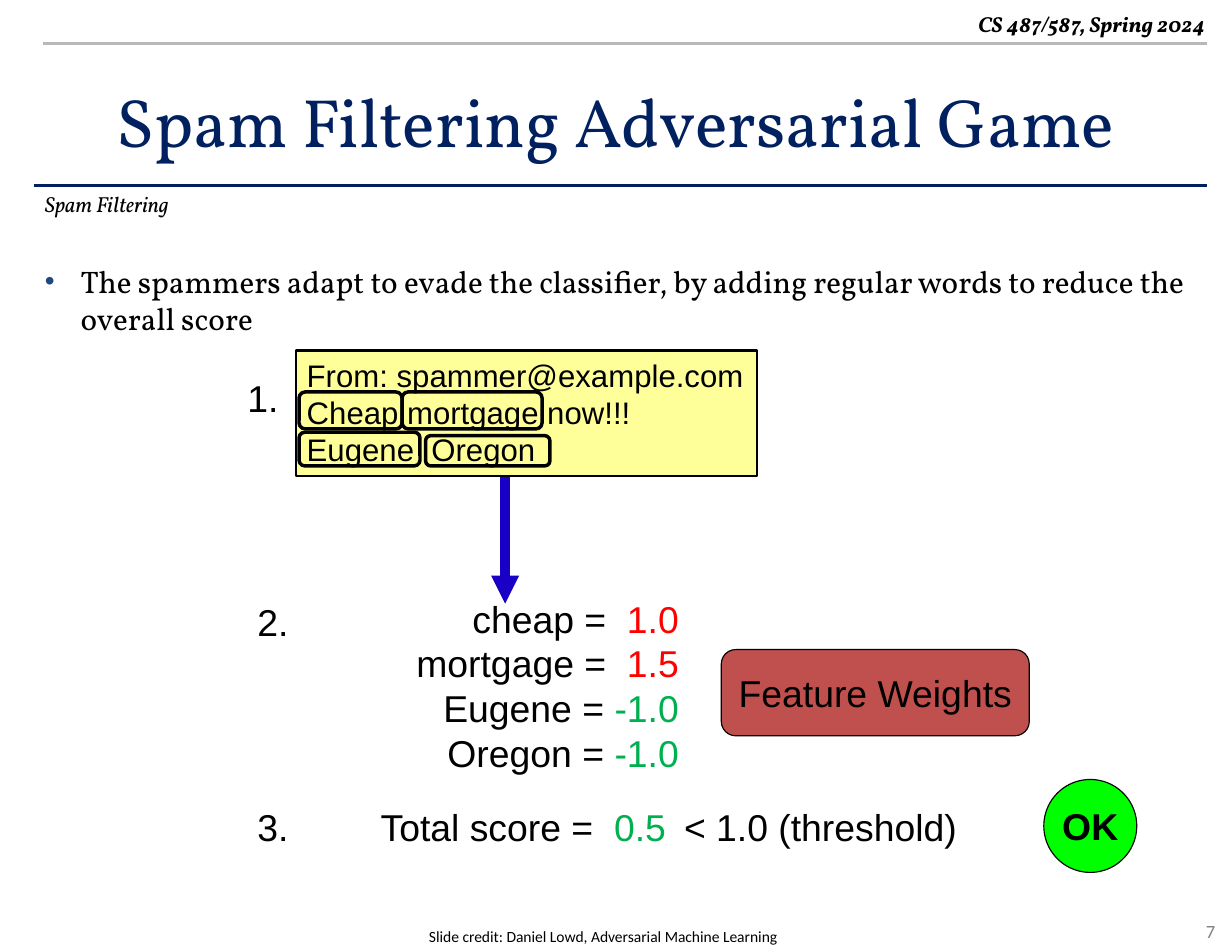
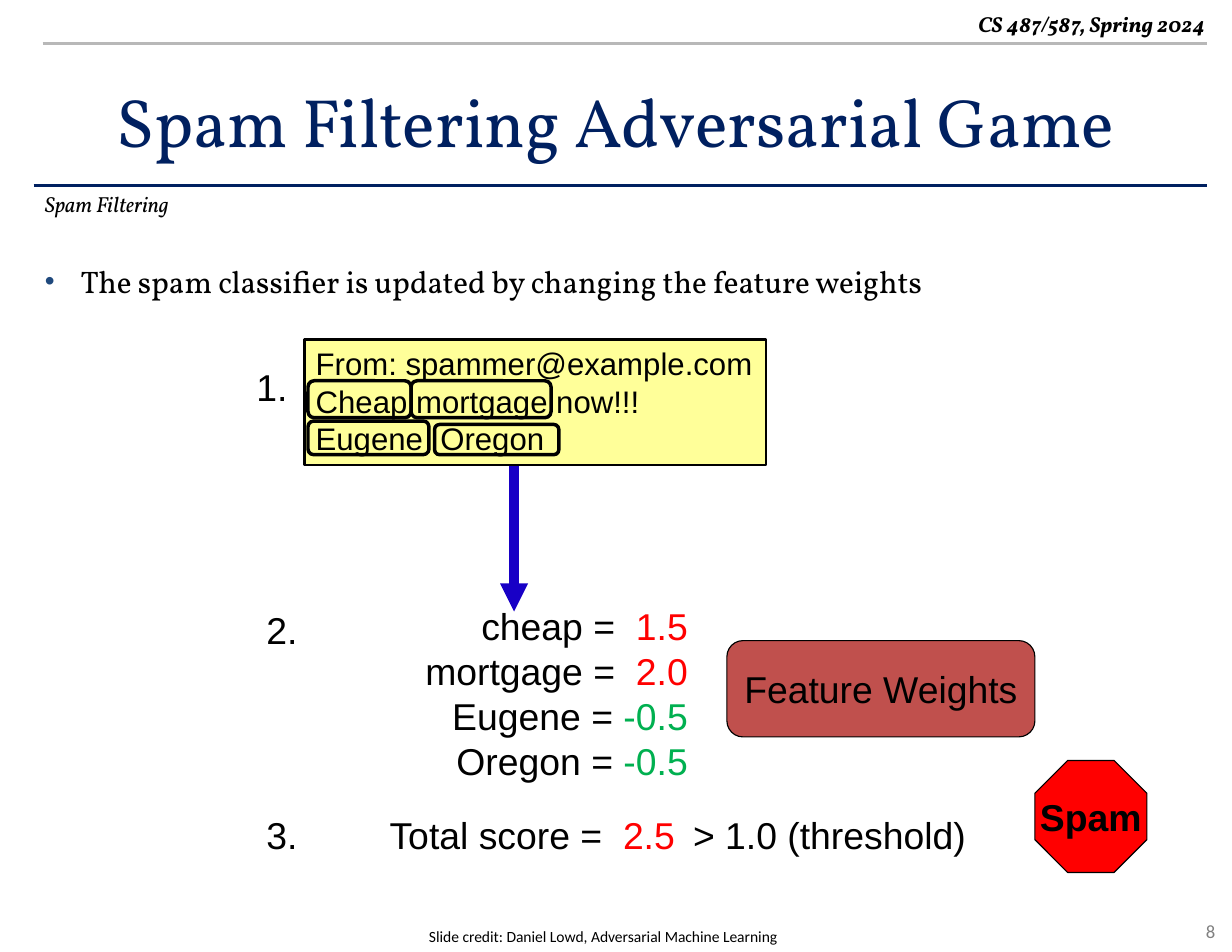
from lxml import etree
from pptx import Presentation
from pptx.dml.color import RGBColor
from pptx.enum import shapes, text
from pptx.oxml import ns
from pptx.util import Inches, Pt

BLACK = RGBColor(0x00, 0x00, 0x00)
NAVY = RGBColor(0x00, 0x20, 0x60)
BULLET_BLUE = RGBColor(0x1F, 0x49, 0x7D)
GREY = RGBColor(0x80, 0x80, 0x80)
RULE_GREY = RGBColor(0xB8, 0xB8, 0xB8)
EMAIL_YELLOW = RGBColor(0xFF, 0xFF, 0x99)
ARROW_BLUE = RGBColor(0x18, 0x00, 0xC6)
LABEL_RED = RGBColor(0xC0, 0x50, 0x4D)
RED = RGBColor(0xFF, 0x00, 0x00)
GREEN = RGBColor(0x00, 0xB0, 0x50)
OK_GREEN = RGBColor(0x00, 0xFF, 0x00)

SERIF, SANS, SMALL = "Vollkorn", "Arial", "Calibri"
LEFT, CENTER, RIGHT = text.PP_ALIGN.LEFT, text.PP_ALIGN.CENTER, text.PP_ALIGN.RIGHT
MIDDLE = text.MSO_ANCHOR.MIDDLE
KINDS = shapes.MSO_SHAPE
TWO_CONTENT = 3

# Offsets and sizes of the outlined words, relative to the e-mail box
WORD_OUTLINES = [
    (0.03, 0.37, 0.92, 0.33),
    (0.95, 0.37, 1.25, 0.33),
    (0.03, 0.73, 1.08, 0.30),
    (1.16, 0.76, 1.11, 0.27),
]


def inches(box):
    return [Inches(value) for value in box]


def add_run(paragraph, words, size, color=BLACK, font=SANS, bold=False, italic=False):
    run = paragraph.add_run()
    run.text = words
    run.font.size = Pt(size)
    run.font.name = font
    run.font.bold = bold
    run.font.italic = italic
    run.font.color.rgb = color


def paragraphs_of(frame, count):
    """Return the first paragraph and as many new ones as are needed."""
    return [frame.paragraphs[0]] + [frame.add_paragraph() for _ in range(count - 1)]


def add_label(slide, box, lines, size=24, align=LEFT, wrap=False, **style):
    """Add a text box; each line is a list of (words, color) runs."""
    frame = slide.shapes.add_textbox(*inches(box)).text_frame
    frame.word_wrap = wrap
    for paragraph, runs in zip(paragraphs_of(frame, len(lines)), lines):
        paragraph.alignment = align
        for words, color in runs:
            add_run(paragraph, words, size, color, **style)


def add_line(slide, start, end, color, width, arrow=False):
    line = slide.shapes.add_connector(
        shapes.MSO_CONNECTOR.STRAIGHT, *inches(start), *inches(end))
    line.line.color.rgb = color
    line.line.width = Pt(width)
    if arrow:
        etree.SubElement(line.line._get_or_add_ln(), ns.qn("a:tailEnd"), type="triangle")
    etree.SubElement(line._element.spPr, ns.qn("a:effectLst"))


def add_figure(slide, kind, box, fill=None, width=0.75):
    figure = slide.shapes.add_shape(kind, *inches(box))
    figure.shadow.inherit = False
    if fill is None:
        figure.fill.background()
    else:
        figure.fill.solid()
        figure.fill.fore_color.rgb = fill
    figure.line.color.rgb = BLACK
    figure.line.width = Pt(width)
    return figure


def add_badge(slide, kind, box, fill, words, bold=False):
    frame = add_figure(slide, kind, box, fill).text_frame
    frame.word_wrap = False
    frame.vertical_anchor = MIDDLE
    frame.paragraphs[0].alignment = CENTER
    add_run(frame.paragraphs[0], words, 24, bold=bold)


def set_bullet(paragraph, indent):
    """Give a paragraph a blue hanging bullet, or none when indent is 0."""
    props = paragraph._p.get_or_add_pPr()
    props.set("marL", str(Inches(indent)))
    props.set("indent", str(-Inches(indent)))
    if not indent:
        etree.SubElement(props, ns.qn("a:buNone"))
        return
    color = etree.SubElement(props, ns.qn("a:buClr"))
    etree.SubElement(color, ns.qn("a:srgbClr"), val=str(BULLET_BLUE))
    etree.SubElement(props, ns.qn("a:buSzPct"), val="90000")
    etree.SubElement(props, ns.qn("a:buFont"), typeface="Arial")
    etree.SubElement(props, ns.qn("a:buChar"), char="•")


def fill_placeholder(holder, box, words, size, color=BLACK, italic=False):
    holder.left, holder.top, holder.width, holder.height = inches(box)
    frame = holder.text_frame
    frame.auto_size = text.MSO_AUTO_SIZE.NONE
    frame.word_wrap = True
    add_run(frame.paragraphs[0], words, size, color, SERIF, italic=italic)
    return frame


def add_frame(slide, number):
    """Draw the header, rules, credit and page number."""
    add_label(slide, (9.74, 8.16, 1.21, 0.3), [[(str(number), GREY)]], 12,
              RIGHT, True, font=SMALL)
    add_line(slide, (0.3, 1.66), (10.78, 1.66), NAVY, 2)
    add_label(slide, (0.12, 0.05, 10.74, 0.34), [[("CS 487/587, Spring 2024", BLACK)]],
              14, RIGHT, True, font=SERIF, bold=True, italic=True)
    add_line(slide, (0.38, 0.39), (10.78, 0.39), RULE_GREY, 1.5)
    add_label(slide, (1.25, 8.23, 8.27, 0.27),
              [[("Slide credit: Daniel Lowd, Adversarial Machine Learning", BLACK)]],
              10, CENTER, True, font=SMALL)


def add_headings(slide, point):
    title, body, section = slide.placeholders
    heading = fill_placeholder(title, (0, 0.5, 11, 1.15),
                               "Spam Filtering Adversarial Game", 44, NAVY)
    heading.vertical_anchor = MIDDLE
    heading.paragraphs[0].alignment = CENTER
    main_point = fill_placeholder(body, (0.3, 2.29, 10.48, 5.87), point, 20)
    set_bullet(main_point.paragraphs[0], 0.32)
    topic = fill_placeholder(section, (0.3, 1.65, 6.77, 0.38), "Spam Filtering", 14,
                             italic=True)
    set_bullet(topic.paragraphs[0], 0)


def add_step_number(slide, left, top, number):
    add_label(slide, (left, top, 0.48, 0.5), [[(f"{number}.", BLACK)]])


def add_email(slide, left, top):
    """Draw step 1: the message with its feature words outlined."""
    add_step_number(slide, left - 0.53, top + 0.17, 1)
    email = add_figure(slide, KINDS.RECTANGLE, (left, top, 4.12, 1.12), EMAIL_YELLOW, 1.5)
    frame = email.text_frame
    frame.vertical_anchor = text.MSO_ANCHOR.TOP
    sender, message = paragraphs_of(frame, 2)
    sender.alignment = message.alignment = LEFT
    add_run(sender, "From: spammer@example.com", 20)
    add_run(message, "Cheap mortgage now!!!", 20)
    message.add_line_break()
    add_run(message, "Eugene  Oregon", 20)
    for dx, dy, width, height in WORD_OUTLINES:
        add_figure(slide, KINDS.ROUNDED_RECTANGLE,
                   (left + dx, top + dy, width, height), width=2.25)


def add_scoring(slide, left, top, weights, total, total_color, comparison):
    """Draw steps 2 and 3: the feature weights and their sum."""
    total_top = top + 1.86
    add_step_number(slide, left - 1.39, top + 0.03, 2)
    add_step_number(slide, left - 1.39, total_top, 3)
    lines = []
    for word, weight in weights.items():
        gap, color = (" ", GREEN) if weight < 0 else ("  ", RED)
        lines.append([(f"{word} ={gap}", BLACK), (f"{weight:.1f}", color)])
    add_label(slide, (left, top, 2.57, 1.72), lines, align=RIGHT)
    add_label(slide, (left - 0.29, total_top, 2.79, 0.5),
              [[("Total score =  ", BLACK), (total, total_color)]])
    add_label(slide, (left + 2.42, total_top, 2.64, 0.5),
              [[(f"{comparison} 1.0 (threshold)", BLACK)]])


def build_game_slide(deck, number, point, email, scoring, label_box, verdict,
                     weights, total, total_color, comparison):
    slide = deck.slides.add_slide(deck.slide_layouts[TWO_CONTENT])
    add_headings(slide, point)
    add_frame(slide, number)
    arrow_x = email[0] + 1.87
    add_line(slide, (arrow_x, email[1] + 1.12), (arrow_x, scoring[1] + 0.12),
             ARROW_BLUE, 6, arrow=True)
    add_email(slide, *email)
    add_scoring(slide, *scoring, weights, total, total_color, comparison)
    add_badge(slide, KINDS.ROUNDED_RECTANGLE, label_box, LABEL_RED, "Feature Weights")
    add_badge(slide, *verdict, bold=True)


def main():
    deck = Presentation()
    deck.slide_width, deck.slide_height = Inches(11), Inches(8.5)
    build_game_slide(
        deck, 7,
        "The spammers adapt to evade the classifier, by adding regular words "
        "to reduce the overall score",
        email=(2.64, 3.13), scoring=(3.59, 5.27), label_box=(6.44, 5.8, 2.75, 0.77),
        verdict=(KINDS.OVAL, (9.32, 6.96, 0.83, 0.83), OK_GREEN, "OK"),
        weights={"cheap": 1.0, "mortgage": 1.5, "Eugene": -1.0, "Oregon": -1.0},
        total="0.5", total_color=GREEN, comparison="<")
    build_game_slide(
        deck, 8,
        "The spam classifier is updated by changing the feature weights",
        email=(2.72, 3.03), scoring=(3.67, 5.34), label_box=(6.49, 5.72, 2.75, 0.86),
        verdict=(KINDS.OCTAGON, (9.24, 6.79, 1, 1), RED, "Spam"),
        weights={"cheap": 1.5, "mortgage": 2.0, "Eugene": -0.5, "Oregon": -0.5},
        total="2.5", total_color=RED, comparison=">")
    deck.save("out.pptx")


if __name__ == "__main__":
    main()
